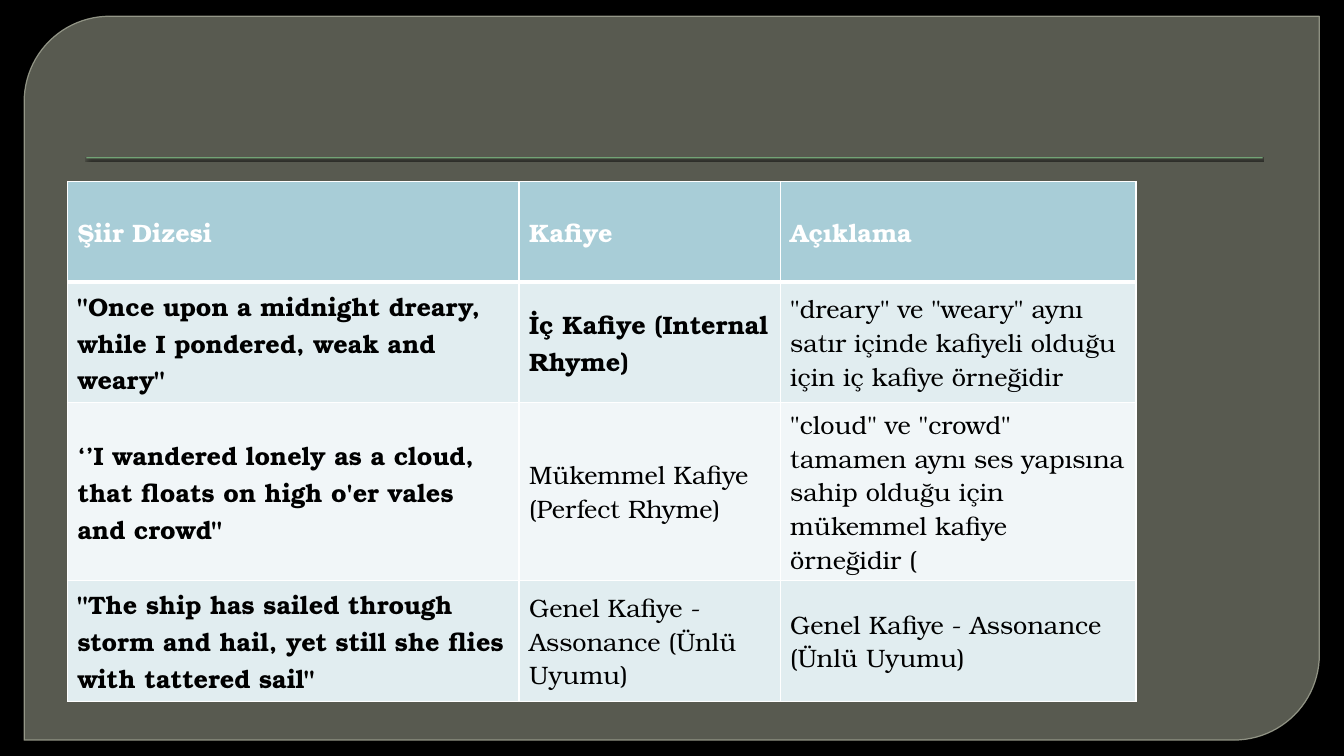
from lxml.etree import SubElement
from pptx import Presentation
from pptx.dml.color import RGBColor
from pptx.enum.shapes import MSO_SHAPE
from pptx.enum.text import MSO_ANCHOR
from pptx.oxml.ns import qn
from pptx.util import Cm, Pt

FONT = "TeX Gyre Bonum"
WHITE, BLACK = "FFFFFF", "000000"
HEADER_FILL = "A8CDD7"
BAND_FILLS = ["E1EDF0", "F1F6F8"]
COLUMN_WIDTHS = [11.38, 6.58, 8.97]
HEADER_HEIGHT, ROW_HEIGHT = 2.54, 2.57

# Each cell is its text and whether it is bold.
HEADINGS = [("Şiir Dizesi", True), ("Kafiye", True), ("Açıklama", True)]
RHYMES = [
    [('"Once upon a midnight dreary, while I pondered, weak and weary"', True),
     ("İç Kafiye (Internal Rhyme)", True),
     ('"dreary" ve "weary" aynı satır içinde kafiyeli olduğu için iç kafiye örneğidir', False)],
    [("‘’I wandered lonely as a cloud, that floats on high o'er vales and crowd\"", True),
     ("Mükemmel Kafiye (Perfect Rhyme)", False),
     ('"cloud" ve "crowd" tamamen aynı ses yapısına sahip olduğu için mükemmel kafiye örneğidir (', False)],
    [('"The ship has sailed through storm and hail, yet still she flies with tattered sail"', True),
     ("Genel Kafiye - Assonance (Ünlü Uyumu)", False),
     ("Genel Kafiye - Assonance (Ünlü Uyumu)", False)],
]


def paint(fill, color, opacity=100):
    fill.solid()
    fill.fore_color.rgb = RGBColor.from_string(color)
    if opacity < 100:
        set_opacity(fill._xPr.find(qn("a:solidFill"))[0], opacity)


def set_opacity(color_element, percent):
    SubElement(color_element, qn("a:alpha"), val=str(percent * 1000))


class RhymeSlide:
    def __init__(self, presentation):
        self.slide = presentation.slides.add_slide(presentation.slide_layouts[6])
        paint(self.slide.background.fill, BLACK)

    def add_panel(self, left, top, width, height):
        panel = self.slide.shapes.add_shape(
            MSO_SHAPE.ROUND_2_DIAG_RECTANGLE, Cm(left), Cm(top), Cm(width), Cm(height))
        panel.shadow.inherit = False
        panel.adjustments[0] = 0.118
        panel.adjustments[1] = 0
        paint(panel.fill, "888B7B", 65)
        panel.line.width = Pt(0.87)
        paint(panel.line.fill, "9DA090", 88)

    def add_divider(self, left, top, width, height):
        """Draw a thin bar with a hard shadow just below it."""
        divider = self.slide.shapes.add_shape(
            MSO_SHAPE.RECTANGLE, Cm(left), Cm(top), Cm(width), Cm(height))
        divider.shadow.inherit = False
        paint(divider.fill, "72A376")
        divider.line.fill.background()
        effects = divider._element.spPr.find(qn("a:effectLst"))
        shadow = SubElement(effects, qn("a:outerShdw"), blurRad=str(Pt(1)),
                            dist=str(Pt(1)), dir="5400000", rotWithShape="0")
        set_opacity(SubElement(shadow, qn("a:srgbClr"), val=BLACK), 75)

    def add_table(self, left, top, headings, rows):
        height = HEADER_HEIGHT + ROW_HEIGHT * len(rows)
        table = self.slide.shapes.add_table(
            len(rows) + 1, len(headings), Cm(left), Cm(top),
            Cm(sum(COLUMN_WIDTHS)), Cm(height)).table
        for column, width in zip(table.columns, COLUMN_WIDTHS):
            column.width = Cm(width)
        for index, entries in enumerate([headings, *rows]):
            is_header = index == 0
            table.rows[index].height = Cm(HEADER_HEIGHT if is_header else ROW_HEIGHT)
            fill = HEADER_FILL if is_header else BAND_FILLS[(index - 1) % 2]
            for column, (text, bold) in enumerate(entries):
                cell = table.cell(index, column)
                self.add_borders(cell, top=3 if index == 1 else 1,
                                 bottom=3 if is_header else 1)
                paint(cell.fill, fill)
                self.add_cell_text(cell, text, bold, WHITE if is_header else BLACK)

    def add_borders(self, cell, top, bottom):
        properties = cell._tc.get_or_add_tcPr()
        for side, points in zip("LRTB", (1, 1, top, bottom)):
            border = SubElement(properties, qn(f"a:ln{side}"), w=str(Pt(points)))
            solid = SubElement(border, qn("a:solidFill"))
            SubElement(solid, qn("a:srgbClr"), val=WHITE)

    def add_cell_text(self, cell, text, bold, color):
        cell.vertical_anchor = MSO_ANCHOR.MIDDLE
        run = cell.text_frame.paragraphs[0].add_run()
        run.text = text
        run.font.name = FONT
        run.font.size = Pt(18)
        run.font.bold = bold
        paint(run.font.fill, color)


def main():
    presentation = Presentation()
    presentation.slide_width, presentation.slide_height = Cm(33.87), Cm(19.05)
    slide = RhymeSlide(presentation)
    slide.add_panel(0.61, 0.41, 32.64, 18.24)
    slide.add_divider(2.18, 3.96, 29.64, 0.03)
    slide.add_table(1.7, 4.57, HEADINGS, RHYMES)
    presentation.save("out.pptx")


if __name__ == "__main__":
    main()
